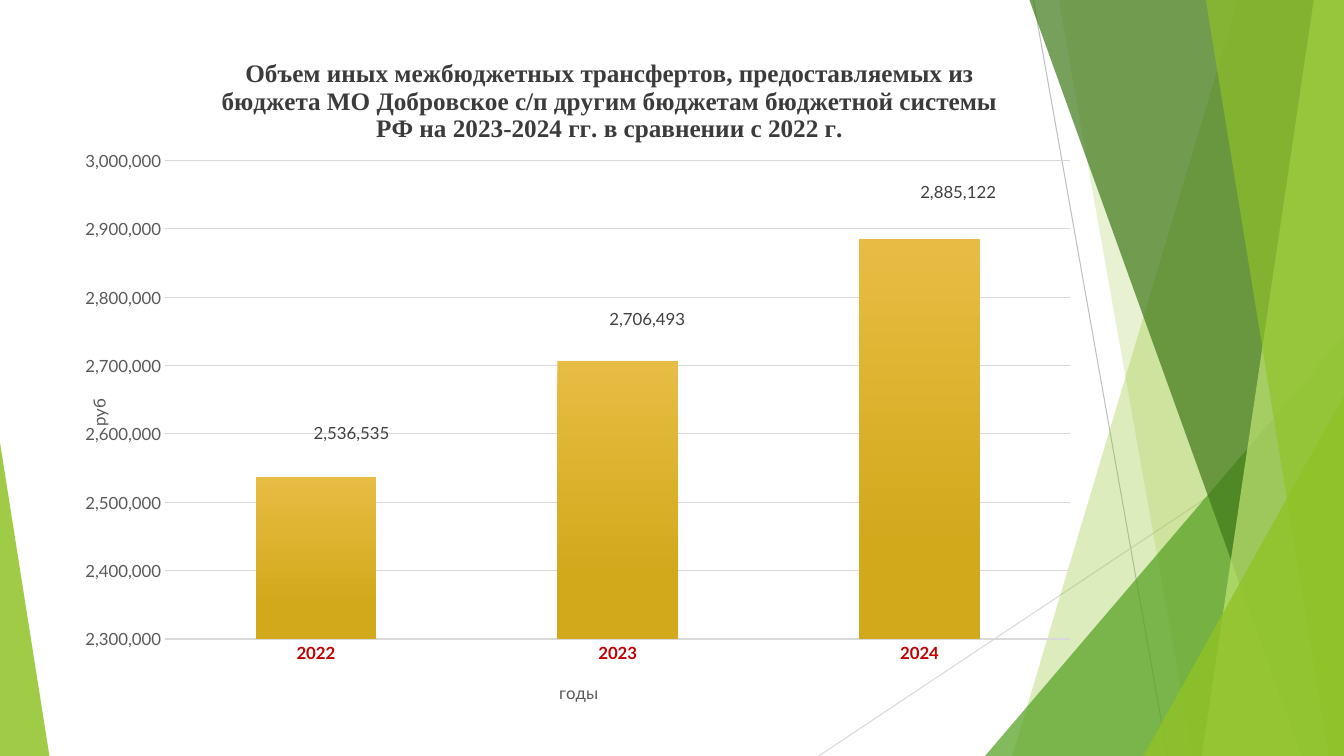
from lxml.etree import SubElement
from pptx import Presentation
from pptx.chart.data import CategoryChartData
from pptx.dml.color import RGBColor
from pptx.enum.chart import XL_CHART_TYPE, XL_TICK_MARK
from pptx.enum.shapes import MSO_CONNECTOR, MSO_SHAPE
from pptx.oxml import parse_xml
from pptx.oxml.ns import nsdecls, qn
from pptx.util import Inches, Pt

COLORS = {
    "lime": "90C226", "leaf": "54A021", "forest": "3F7819", "pale": "C0E474",
    "line": "BFBFBF", "grid": "D9D9D9", "title": "3B3B3B", "text": "595959",
    "label": "404040", "year": "C00000", "top": "E7BC43", "base": "D2A91B",
}
RGB = {name: RGBColor.from_string(code) for name, code in COLORS.items()}
W, H = 13.33, 7.5

deck = Presentation()
deck.slide_width, deck.slide_height = Inches(W), Inches(H)
slide = deck.slides.add_slide(deck.slide_layouts[6])
shapes = slide.shapes


def style(font, size, color, face="Lato", bold=False):
    font.size, font.name, font.bold = Pt(size), face, bold
    font.color.rgb = RGB[color]


def place(parent, index, x, y, edge=True):
    """Give a chart title or label a manual position, in shares of the chart."""
    for old in parent.findall(qn("c:layout")):
        parent.remove(old)
    modes = '<c:xMode val="edge"/><c:yMode val="edge"/>' if edge else ""
    parent.insert(index, parse_xml(
        f'<c:layout {nsdecls("c")}><c:manualLayout>{modes}'
        f'<c:x val="{x}"/><c:y val="{y}"/></c:manualLayout></c:layout>'))


# Thin lines behind the facets
for x1, y1, x2, y2, color in [(10.25, 0, 11.58, H, "line"),
                              (W, 4.03, 8.12, H, "grid")]:
    line = shapes.add_connector(MSO_CONNECTOR.STRAIGHT, Inches(x1), Inches(y1),
                                Inches(x2), Inches(y2))
    line.line.color.rgb, line.line.width = RGB[color], Pt(0.75)
    SubElement(line._element.spPr, qn("a:effectLst"))

# Facets from back to front: a band has a top and a bottom left corner and
# runs to the right edge; a triangle has left, top, width and its apex side
facets = [
    ("band", (12.28, 10.04), "lime", 30),
    ("band", (10.5, 11.83), "lime", 20),
    ("triangle", (9.77, 3.33, 3.56, 1), "leaf", 72),
    ("band", (10.21, 12.91), "forest", 70),
    ("band", (13.03, 11.92), "pale", 70),
    ("band", (11.96, 13.18), "lime", 65),
    ("triangle", (11.34, 3.93, 1.99, 1), "lime", 80),
    ("triangle", (0, 4.39, 0.49, 0), "lime", 85),
]
for kind, place_at, color, alpha in facets:
    if kind == "band":
        upper, lower = place_at
        path = shapes.build_freeform(Inches(upper), 0)
        path.add_line_segments([(Inches(x), Inches(y)) for x, y in
                                [(W, 0), (W, H), (lower, H)]])
        facet = path.convert_to_shape()
    else:
        left, top, width, apex = place_at
        facet = shapes.add_shape(MSO_SHAPE.ISOSCELES_TRIANGLE, Inches(left),
                                 Inches(top), Inches(width), Inches(H - top))
        facet.adjustments[0] = apex
    facet.shadow.inherit = False
    facet.line.fill.background()
    facet.fill.solid()
    facet.fill.fore_color.rgb = RGB[color]
    tint = facet._element.spPr.find(".//" + qn("a:srgbClr"))
    SubElement(tint, qn("a:alpha"), val=str(alpha * 1000))

# Chart
data = CategoryChartData(number_format="#,##0")
data.categories = ["2022", "2023", "2024"]
data.add_series("Series 1", [2536535, 2706493, 2885122])
chart = shapes.add_chart(XL_CHART_TYPE.COLUMN_STACKED, Inches(0.83), Inches(0.5),
                         Inches(10.1), Inches(6.63), data).chart
chart.has_legend = False
chart.font.size, chart.font.name = Pt(10), "Lato"

years, rubles = chart.category_axis, chart.value_axis
chart.has_title = True
titles = [
    (chart.chart_title,
     "Объем иных межбюджетных трансфертов, предоставляемых из бюджета "
     "МО Добровское с/п другим бюджетам бюджетной системы РФ "
     "на 2023-2024 гг. в сравнении с 2022 г.",
     (18, "title", "Times New Roman", True), (0.131, 0.004)),
    (years.axis_title, "годы", (12, "text"), (0.464, 0.938)),
    (rubles.axis_title, "руб", (12, "text"), (0, 0.517)),
]
for title, text, look, spot in titles:
    title.text_frame.text = text
    style(title.text_frame.paragraphs[0].font, *look)
    place(title._element, 1, *spot)
turn = rubles.axis_title.text_frame._txBody.find(qn("a:bodyPr"))
turn.set("rot", "-5400000")
turn.set("vert", "horz")

for axis in (years, rubles):
    axis.major_tick_mark = axis.minor_tick_mark = XL_TICK_MARK.NONE
style(years.tick_labels.font, 12, "year", bold=True)
style(rubles.tick_labels.font, 12, "text")
years.format.line.color.rgb, years.format.line.width = RGB["grid"], Pt(1)
rubles.format.line.fill.background()
rubles.minimum_scale, rubles.maximum_scale = 2300000, 3000000
rubles.major_unit = 100000
rubles.tick_labels.number_format = "#,##0"
rubles.tick_labels.number_format_is_linked = False
grid = rubles.major_gridlines.format.line
grid.color.rgb, grid.width = RGB["grid"], Pt(0.75)

plot = chart.plots[0]
plot.gap_width, plot.overlap, plot.vary_by_categories = 150, 100, False
bars = plot.series[0]
fill = bars.format.fill
fill.gradient()
fill.gradient_angle = 270
for stop, color, share in zip(fill.gradient_stops, ("top", "base"), (0, 0.78)):
    stop.color.rgb, stop.position = RGB[color], share

labels = bars.data_labels
labels.show_value = True
labels.number_format, labels.number_format_is_linked = "#,##0", False
style(labels.font, 12, "label")
for i, shift in enumerate([(0.035, -0.188), (0.029, -0.271), (0.038, -0.37)]):
    style(bars.points[i].data_label.font, 12, "label")
    place(bars._element.findall(".//" + qn("c:dLbl"))[i], 1, *shift, edge=False)

# Moved labels have no leader lines
group = bars._element.find(qn("c:dLbls"))
for lead in group.findall(qn("c:showLeaderLines")):
    group.remove(lead)
SubElement(group, qn("c:showLeaderLines"), val="0")
group.append(parse_xml(
    f'<c:extLst {nsdecls("c")}>'
    '<c:ext uri="{CE6537A1-D6FC-4f65-9D91-7224C49458BB}" '
    'xmlns:c15="http://schemas.microsoft.com/office/drawing/2012/chart">'
    '<c15:showLeaderLines val="0"/></c:ext></c:extLst>'))

# Plot area position and clear backgrounds
area = chart.element.find(".//" + qn("c:plotArea"))
place(area, 0, 0.08, 0.165)
frame = area.find(qn("c:layout"))[0]
frame.insert(0, parse_xml(f'<c:layoutTarget {nsdecls("c")} val="inner"/>'))
for tag, share in (("c:w", 0.889), ("c:h", 0.716)):
    SubElement(frame, qn(tag), val=str(share))
clear = (f'<c:spPr {nsdecls("c", "a")}><a:noFill/>'
         '<a:ln><a:noFill/></a:ln></c:spPr>')
area.append(parse_xml(clear))
chart.element.find(qn("c:chart")).addnext(parse_xml(clear))

deck.save("out.pptx")
